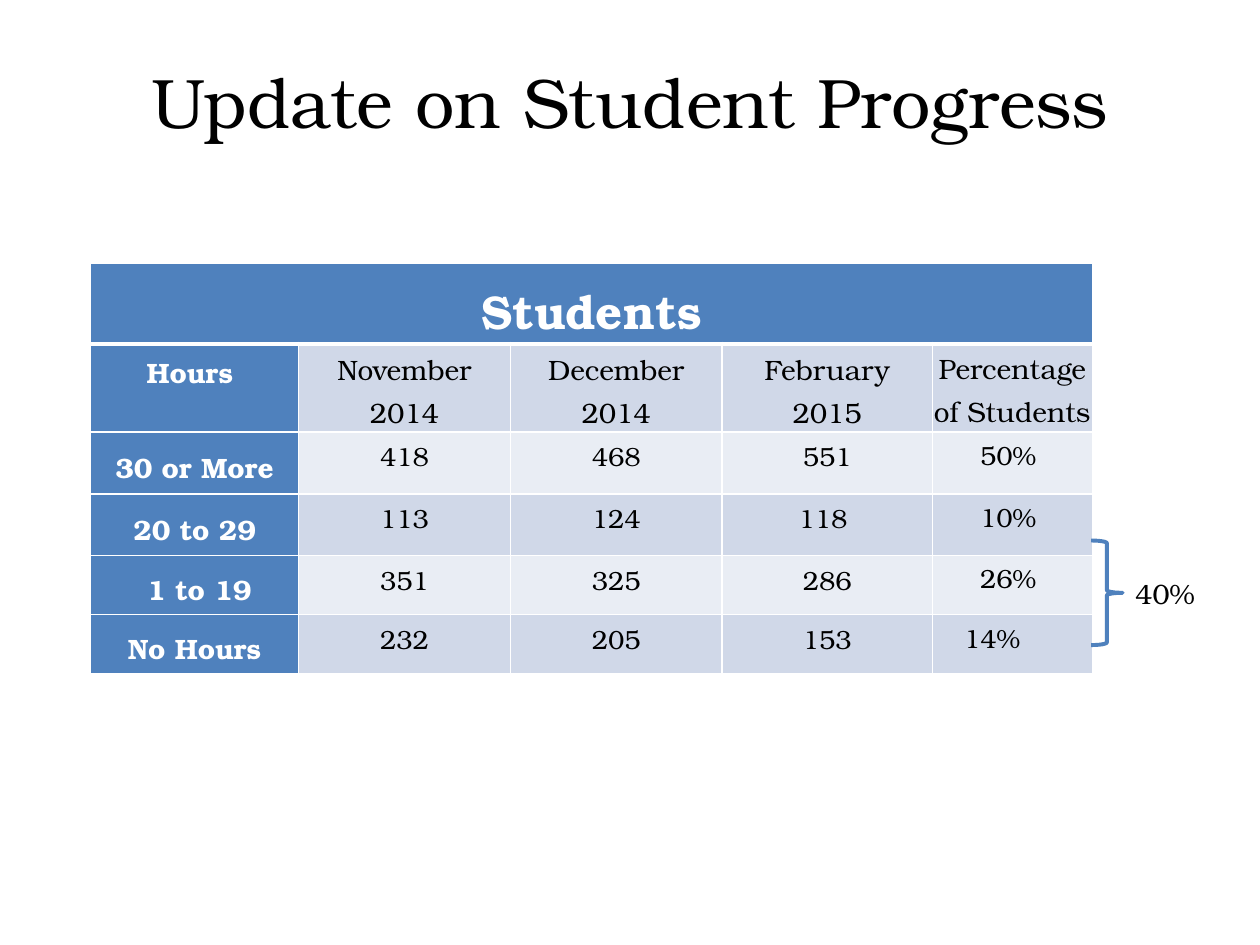
from dataclasses import dataclass

from lxml.etree import SubElement
from pptx import Presentation
from pptx.dml.color import RGBColor
from pptx.enum.shapes import MSO_SHAPE
from pptx.enum.text import MSO_ANCHOR, PP_ALIGN
from pptx.oxml.ns import qn
from pptx.util import Inches, Pt


@dataclass(frozen=True)
class Theme:
    font: str = "TeX Gyre Bonum"
    black: str = "000000"
    white: str = "FFFFFF"
    blue: str = "4F81BD"
    bands: tuple = ("D0D8E8", "E9EDF4")
    title_size: int = 40
    heading_size: int = 27
    label_size: int = 16
    value_size: int = 15
    thin_border: int = 1
    thick_border: int = 3
    brace_line: float = 2.25


THEME = Theme()
COLUMN_WIDTHS = (1.65, 1.68, 1.68, 1.67, 1.27)
ROW_HEIGHTS = (0.63, 0.7, 0.49, 0.49, 0.47, 0.47)
PROGRESS_ROWS = (
    ("Hours ", "November 2014", "December 2014", "February 2015", "Percentage of Students"),
    (" 30 or More ", "418", "468", "551", "50% "),
    (" 20 to 29 ", "113", "124", "118 ", "10% "),
    (" 1 to 19", "351", "325", "286", "26% "),
    (" No Hours ", "232", "205", "153", "14%"),
)


def write_text(frame, text, size=THEME.label_size, color=THEME.black, bold=False,
               align=PP_ALIGN.CENTER, spacing=1.15):
    paragraph = frame.paragraphs[0]
    paragraph.alignment = align
    paragraph.line_spacing = spacing
    run = paragraph.add_run()
    run.text = text
    run.font.name = THEME.font
    run.font.size = Pt(size)
    run.font.bold = bold
    run.font.color.rgb = RGBColor.from_string(color)


class SlideBuilder:
    def __init__(self, slide, theme):
        self.slide = slide
        self.theme = theme

    def title(self, text, left, top, width, height):
        title = self.slide.shapes.title
        title.left, title.top = Inches(left), Inches(top)
        title.width, title.height = Inches(width), Inches(height)
        title.text_frame.vertical_anchor = MSO_ANCHOR.MIDDLE
        write_text(title.text_frame, text, size=self.theme.title_size, spacing=1)

    def shape(self, kind, left, top, width, height, fill=None, line=None):
        shape = self.slide.shapes.add_shape(
            kind, Inches(left), Inches(top), Inches(width), Inches(height))
        shape.shadow.inherit = False
        if fill:
            shape.fill.solid()
            shape.fill.fore_color.rgb = RGBColor.from_string(fill)
        else:
            shape.fill.background()
        if line:
            shape.line.color.rgb = RGBColor.from_string(line)
            shape.line.width = Pt(self.theme.brace_line)
        else:
            shape.line.fill.background()
        return shape

    def label(self, text, left, top, width, height):
        box = self.shape(MSO_SHAPE.RECTANGLE, left, top, width, height, fill=self.theme.white)
        box.text_frame.word_wrap = True
        box.text_frame.vertical_anchor = MSO_ANCHOR.TOP
        write_text(box.text_frame, text, align=PP_ALIGN.LEFT)

    def brace(self, left, top, width, height):
        self.shape(MSO_SHAPE.RIGHT_BRACE, left, top, width, height, line=self.theme.blue)

    def table(self, left, top, column_widths, row_heights):
        frame = self.slide.shapes.add_table(
            len(row_heights), len(column_widths), Inches(left), Inches(top),
            Inches(sum(column_widths)), Inches(sum(row_heights)))
        for column, width in zip(frame.table.columns, column_widths):
            column.width = Inches(width)
        for row, height in zip(frame.table.rows, row_heights):
            row.height = Inches(height)
        return frame.table

    def cell(self, cell, fill, side_margin=0.07, bottom_border=THEME.thin_border):
        cell.margin_left = cell.margin_right = Inches(side_margin)
        cell.margin_top = Inches(0.01 if side_margin else 0)
        cell.margin_bottom = 0
        properties = cell._tc.get_or_add_tcPr()
        for side in ("L", "R", "T", "B"):
            width = bottom_border if side == "B" else self.theme.thin_border
            border = SubElement(properties, qn(f"a:ln{side}"), w=str(Pt(width)))
            solid_fill = SubElement(border, qn("a:solidFill"))
            SubElement(solid_fill, qn("a:srgbClr"), val=self.theme.white)
        cell.fill.solid()
        cell.fill.fore_color.rgb = RGBColor.from_string(fill)

    def progress_table(self, heading, rows, left, top):
        theme = self.theme
        table = self.table(left, top, COLUMN_WIDTHS, ROW_HEIGHTS)
        last_column = len(COLUMN_WIDTHS) - 1
        for column in range(len(COLUMN_WIDTHS)):
            self.cell(table.cell(0, column), theme.blue, bottom_border=theme.thick_border)
        table.cell(0, 0).merge(table.cell(0, last_column))
        write_text(table.cell(0, 0).text_frame, heading, size=theme.heading_size,
                   color=theme.white, bold=True)
        for row_index, row in enumerate(rows):
            for column, text in enumerate(row):
                cell = table.cell(row_index + 1, column)
                is_label = column == 0
                is_header = row_index == 0
                self.cell(cell, theme.blue if is_label else theme.bands[row_index % 2],
                          side_margin=0 if column == last_column else 0.07)
                if is_label and not is_header:
                    cell.vertical_anchor = MSO_ANCHOR.MIDDLE
                write_text(cell.text_frame, text,
                           size=theme.label_size if is_label or is_header else theme.value_size,
                           color=theme.white if is_label else theme.black, bold=is_label)
        table.cell(len(rows), last_column).margin_right = Inches(0.32)


def main():
    presentation = Presentation()
    presentation.slide_width, presentation.slide_height = Inches(10), Inches(7.5)
    slide = presentation.slides.add_slide(presentation.slide_layouts[5])
    builder = SlideBuilder(slide, THEME)
    builder.title("Update on Student Progress", 0.5, 0.42, 9, 0.75)
    builder.progress_table("Students", PROGRESS_ROWS, 0.72, 2.09)
    builder.label("40%", 8.91, 4.49, 0.72, 0.43)
    builder.brace(8.66, 4.29, 0.25, 0.83)
    presentation.save("out.pptx")


if __name__ == "__main__":
    main()
